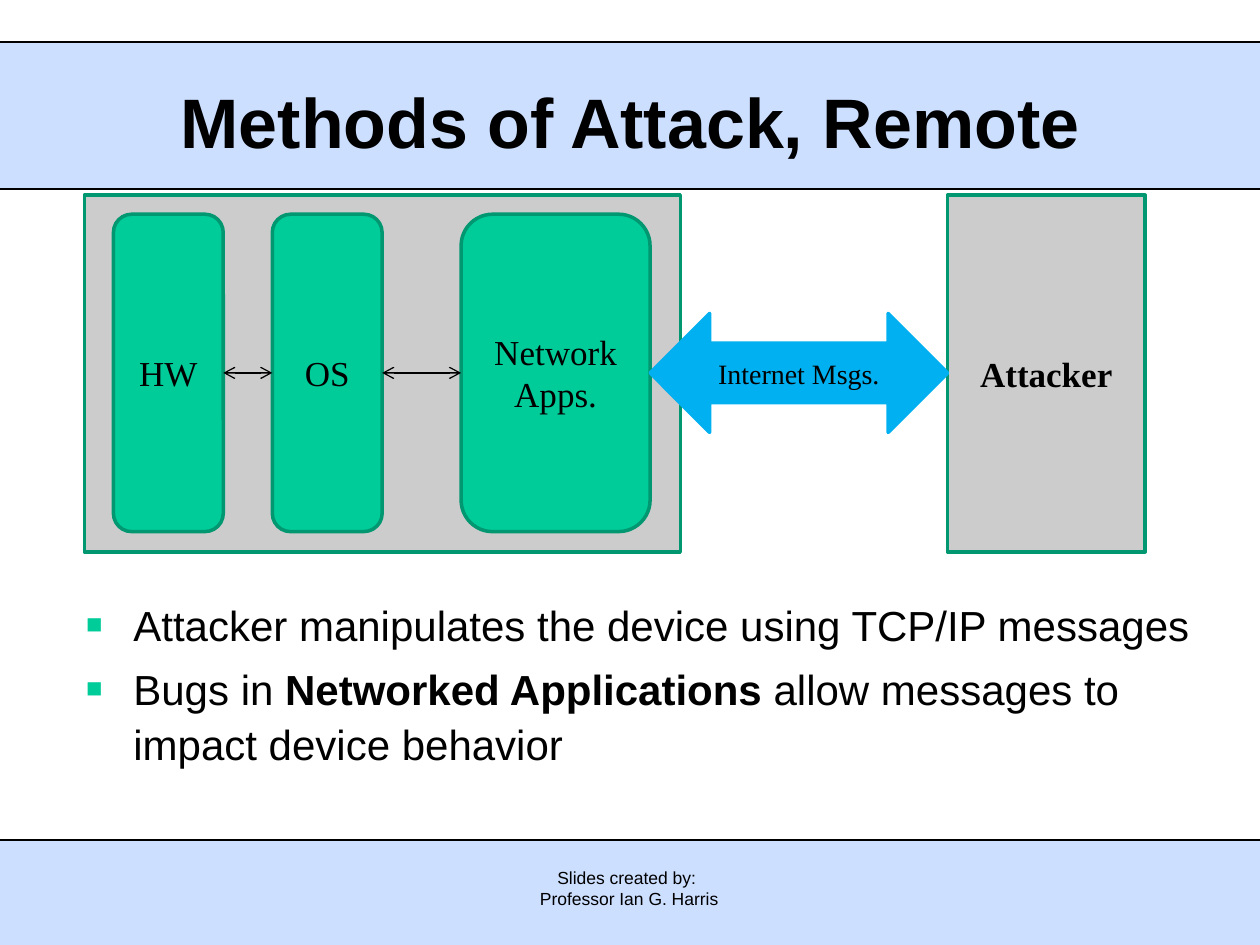
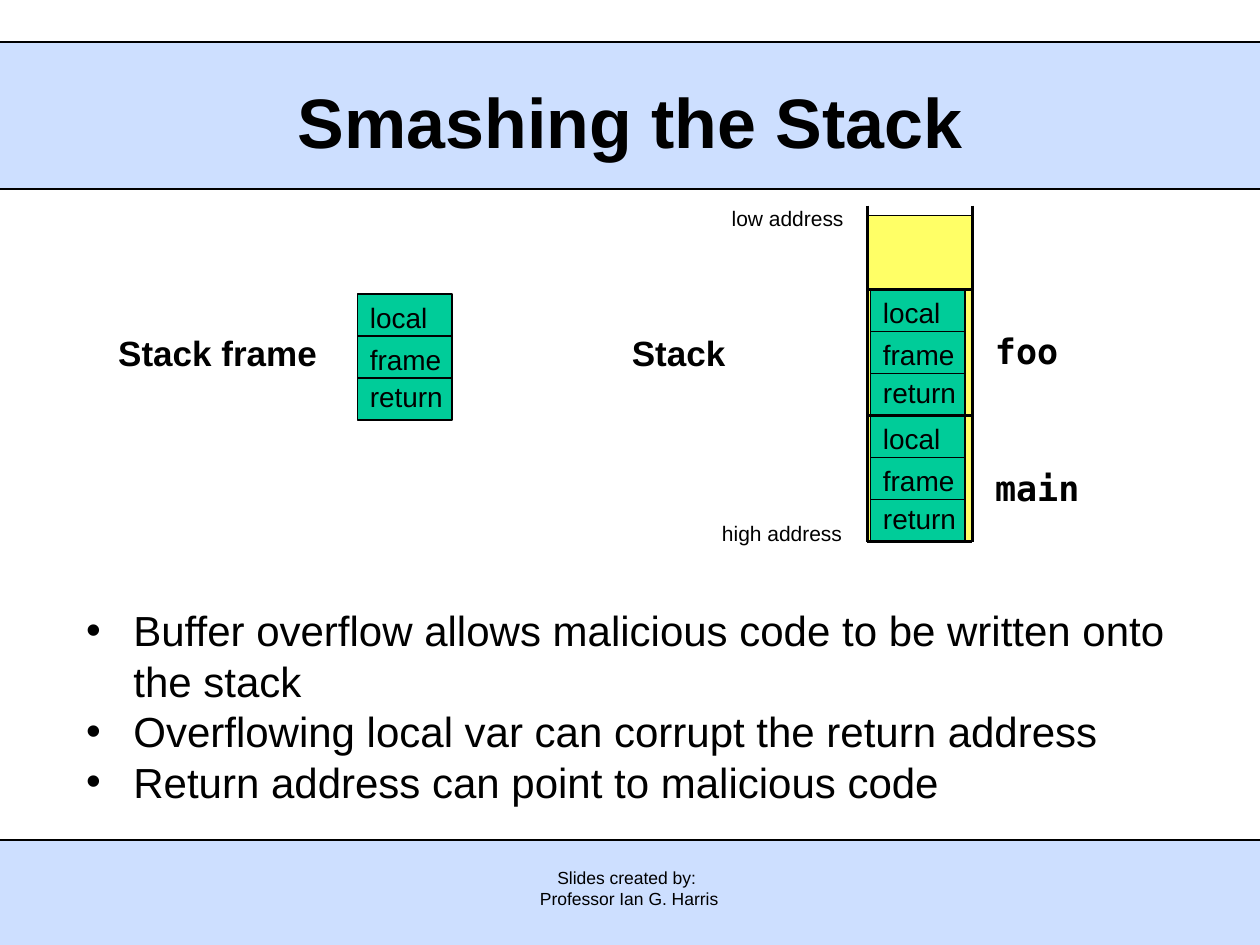
"""Build two slides on remote attacks and stack smashing."""
from dataclasses import dataclass

from lxml import etree
from pptx import Presentation
from pptx.dml.color import RGBColor
from pptx.enum.shapes import MSO_CONNECTOR, MSO_SHAPE
from pptx.enum.text import MSO_ANCHOR, MSO_AUTO_SIZE, PP_ALIGN
from pptx.oxml.ns import qn
from pptx.util import Pt

RECTANGLE = MSO_SHAPE.RECTANGLE
ROUNDED = MSO_SHAPE.ROUNDED_RECTANGLE
DOUBLE_ARROW = MSO_SHAPE.LEFT_RIGHT_ARROW
STRAIGHT = MSO_CONNECTOR.STRAIGHT
LEFT, CENTER = PP_ALIGN.LEFT, PP_ALIGN.CENTER
TOP, MIDDLE = MSO_ANCHOR.TOP, MSO_ANCHOR.MIDDLE
NO_AUTOSIZE = MSO_AUTO_SIZE.NONE


@dataclass(frozen=True)
class Theme:
    black: str = "000000"
    band: str = "CDDFFF"
    green: str = "00CC99"
    dark_green: str = "009771"
    gray: str = "CCCCCC"
    blue: str = "00B0F0"
    yellow: str = "FFFF66"
    sans: str = "Arial"
    serif: str = "Times New Roman"
    mono: str = "DejaVu Sans Mono"
    title_size: int = 40
    list_size: int = 24
    label_size: int = 20
    part_size: int = 16
    note_size: int = 12
    footer_size: int = 10
    thin: float = 0.75
    medium: float = 1.75
    thick: float = 2


class SlideBuilder:
    def __init__(self, deck, theme):
        self.deck = deck
        self.theme = theme
        self.layout = deck.slide_layouts[1]
        self.page = None
        self.dressed = False

    def add_page(self, title):
        self.page = self.deck.slides.add_slide(self.layout)
        if not self.dressed:
            self.dress_layout()
        box = self.page.shapes.title
        self.place(box, 24, 24, 672, 90)
        box.text_frame.text = title
        self.style_text(box, self.theme.title_size, bold=True, align=CENTER, anchor=MIDDLE)

    def dress_layout(self):
        theme = self.theme
        for holder in list(self.layout.placeholders)[2:]:
            holder.element.getparent().remove(holder.element)
        furniture = [
            self.shape(RECTANGLE, 0, top, 720, height, theme.band, theme.band)
            for top, height in ((480, 60), (24, 84))
        ]
        furniture += [self.line(0, y, 720, y) for y in (24, 108, 480)]
        footer = "Slides created by: \nProfessor Ian G. Harris"
        furniture.append(self.text(footer, 246, 492, 227, 35, theme.footer_size, align=CENTER))
        for item in furniture:
            self.layout.shapes.element.append(item.element)
        self.dressed = True

    def place(self, box, left, top, width, height):
        box.left, box.top, box.width, box.height = map(Pt, (left, top, width, height))

    def style_span(self, span, size, font=None, bold=False):
        span.font.name = font or self.theme.sans
        span.font.size = Pt(size)
        span.font.bold = bold
        span.font.color.rgb = RGBColor.from_string(self.theme.black)

    def style_text(self, box, size, font=None, bold=False, align=LEFT, anchor=TOP, wrap=True):
        frame = box.text_frame
        frame.word_wrap = wrap
        frame.auto_size = NO_AUTOSIZE
        frame.vertical_anchor = anchor
        for para in frame.paragraphs:
            para.alignment = align
            for span in para.runs:
                self.style_span(span, size, font, bold)

    def shape(self, kind, left, top, width, height, fill, outline, weight=None,
              text="", size=None, bold=False):
        box = self.page.shapes.add_shape(kind, *map(Pt, (left, top, width, height)))
        box.shadow.inherit = False
        box.fill.solid()
        box.fill.fore_color.rgb = RGBColor.from_string(fill)
        box.line.color.rgb = RGBColor.from_string(outline)
        box.line.width = Pt(weight or self.theme.thin)
        if text:
            box.text_frame.text = text
            self.style_text(box, size or self.theme.label_size, self.theme.serif, bold,
                            CENTER, MIDDLE)
        return box

    def line(self, x1, y1, x2, y2, weight=None, arrows=False):
        line = self.page.shapes.add_connector(STRAIGHT, *map(Pt, (x1, y1, x2, y2)))
        line.line.color.rgb = RGBColor.from_string(self.theme.black)
        line.line.width = Pt(weight or self.theme.thin)
        if arrows:
            outline = line.line._get_or_add_ln()
            for end in ("a:headEnd", "a:tailEnd"):
                etree.SubElement(outline, qn(end), type="arrow")
        etree.SubElement(line.element.spPr, qn("a:effectLst"))
        return line

    def text(self, text, left, top, width, height, size, font=None, bold=False,
             align=LEFT, wrap=True):
        box = self.page.shapes.add_textbox(*map(Pt, (left, top, width, height)))
        box.text_frame.text = text
        self.style_text(box, size, font, bold, align, wrap=wrap)
        return box

    def bullets(self, items, top, height, mark, color, scale=100, spacing=1.0, before=0):
        box = self.page.placeholders[1]
        self.place(box, 42, top, 648, height)
        frame = box.text_frame
        frame.text = "\n".join("" for _ in items)
        for para, parts in zip(frame.paragraphs, items):
            para.line_spacing = spacing
            para.space_before = Pt(before)
            for index, part in enumerate(parts):
                span = para.add_run()
                span.text = part
                self.style_span(span, self.theme.list_size, bold=index % 2 == 1)
            self.mark_bullet(para, mark, color, scale)
        frame.auto_size = NO_AUTOSIZE
        frame.vertical_anchor = TOP

    def mark_bullet(self, para, mark, color, scale):
        settings = para._p.get_or_add_pPr()
        settings.set("marL", str(Pt(27)))
        settings.set("indent", str(-Pt(27)))
        tint = etree.SubElement(settings, qn("a:buClr"))
        etree.SubElement(tint, qn("a:srgbClr"), val=color)
        etree.SubElement(settings, qn("a:buSzPct"), val=str(scale * 1000))
        etree.SubElement(settings, qn("a:buFont"), typeface=self.theme.sans)
        etree.SubElement(settings, qn("a:buChar"), char=mark)

    def stack_frame(self, left, top):
        theme = self.theme
        self.shape(RECTANGLE, left, top, 54, 72, theme.green, theme.black)
        for name, offset in (("local", 0), ("frame", 24), ("return", 45.5)):
            self.text(name, left, top + offset, 64, 26.5, theme.part_size)
        for offset in (24, 48):
            self.line(left, top + offset, left + 54, top + offset)


def build_remote_attack(builder):
    theme = builder.theme
    builder.add_page("Methods of Attack, Remote")
    panel_top, panel_height = 111.6, 203.8
    layer_top, layer_height = 122.4, 181.4
    axis = layer_top + layer_height / 2
    panels = ((48.2, 340.6, ""), (541.4, 113, "Attacker"))
    for left, width, name in panels:
        builder.shape(RECTANGLE, left, panel_top, width, panel_height, theme.gray,
                      theme.dark_green, theme.thick, name, bold=True)
    layers = ((64.8, 62.8, "HW"), (155.6, 62.8, "OS"), (263.5, 108, "Network\nApps."))
    for left, width, name in layers:
        builder.shape(ROUNDED, left, layer_top, width, layer_height, theme.green,
                      theme.dark_green, theme.thick, name)
    for (left, width, _), (next_left, _, _) in zip(layers, layers[1:]):
        builder.line(left + width, axis, next_left, axis, arrows=True)
    builder.shape(DOUBLE_ARROW, 371.5, axis - 34, 170, 68, theme.blue, theme.blue,
                  theme.thick, "Internet Msgs.", theme.part_size)
    builder.bullets(
        [["Attacker manipulates the device using TCP/IP messages"],
         ["Bugs in ", "Networked Applications ", "allow messages to impact device behavior"]],
        336, 144, "■", theme.green, scale=65, spacing=1.1, before=4.8)


def build_stack_smashing(builder):
    theme = builder.theme
    builder.add_page("Smashing the Stack")
    builder.bullets(
        [["Buffer overflow allows malicious code to be written onto the stack"],
         ["Overflowing local var can corrupt the return address"],
         ["Return address can point to malicious code"]],
        342, 132, "•", theme.black)
    builder.text("Stack frame", 60.5, 186, 130, 31, theme.label_size, bold=True)
    builder.stack_frame(204.3, 168)

    left, right, floor = 495.5, 555.5, 309.5
    builder.shape(RECTANGLE, left, 123, right - left, floor - 123, theme.yellow, theme.black)
    for wall in (left, right):
        builder.line(wall, 117.5, wall, floor, theme.medium)
    for level in (1, 2):
        builder.stack_frame(left + 2, floor - 72 * level)
    for level in range(3):
        y = floor - 72 * level
        builder.line(left, y, right, y, theme.medium)

    labels = (
        ("Stack", 354, 186, 68, 31, theme.label_size, theme.sans, True),
        ("low address", 411, 114, 78.5, 21.8, theme.note_size, theme.sans, False),
        ("high address", 405.5, 294, 83.5, 21.8, theme.note_size, theme.sans, False),
        ("main", 561.5, 263, 62.5, 31, theme.label_size, theme.mono, True),
        ("foo", 561.5, 185, 50.5, 31, theme.label_size, theme.mono, True),
    )
    for label in labels:
        builder.text(*label, wrap=False)


def main():
    deck = Presentation()
    deck.slide_width, deck.slide_height = Pt(720), Pt(540)
    builder = SlideBuilder(deck, Theme())
    build_remote_attack(builder)
    build_stack_smashing(builder)
    deck.save("out.pptx")


if __name__ == "__main__":
    main()
